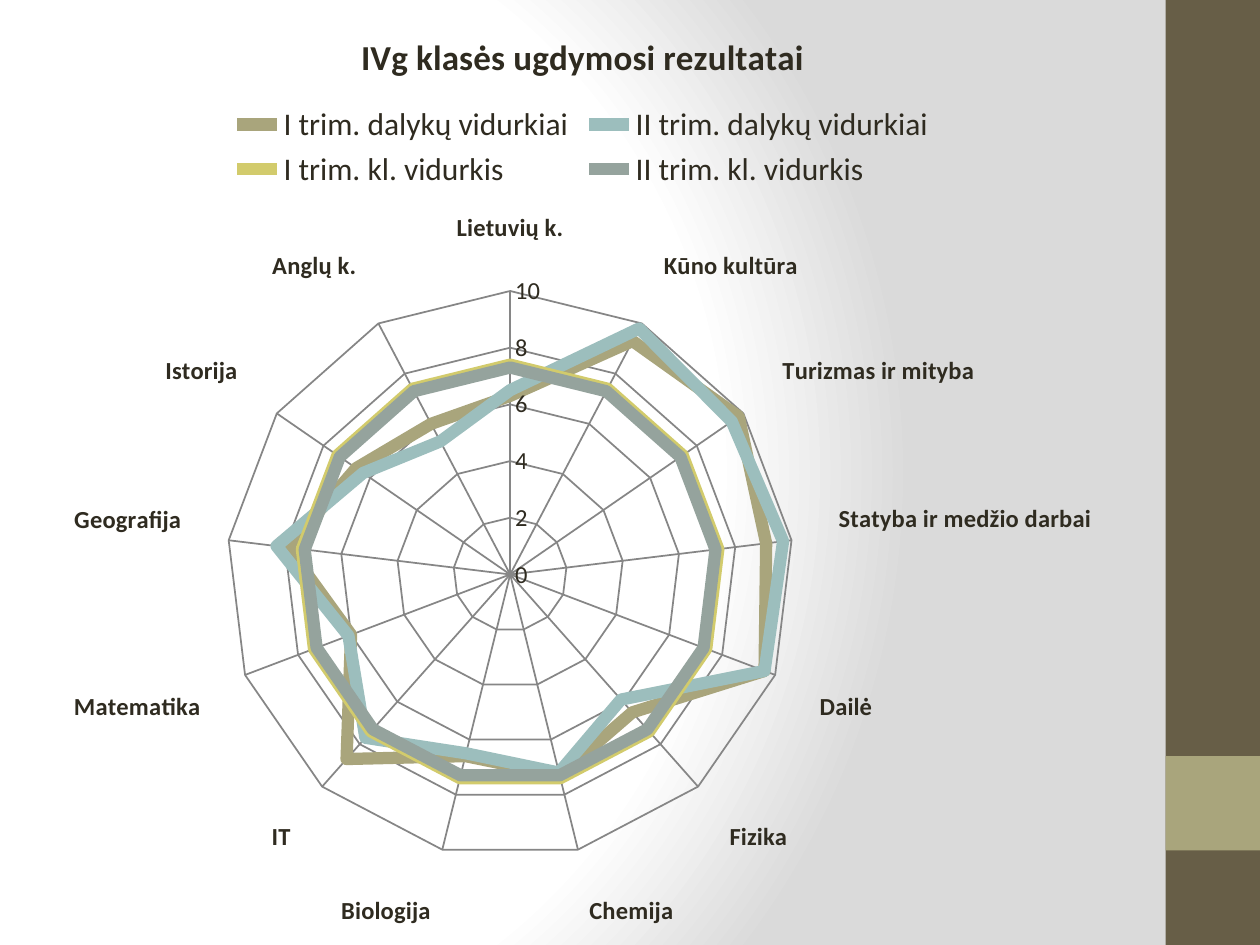
from pptx import Presentation
from pptx.chart.data import CategoryChartData
from pptx.dml.color import RGBColor
from pptx.enum.chart import XL_CHART_TYPE as ChartType
from pptx.enum.chart import XL_LEGEND_POSITION as LegendPosition
from pptx.enum.chart import XL_TICK_MARK as TickMark
from pptx.enum.shapes import MSO_SHAPE as Shape
from pptx.oxml import parse_xml
from pptx.oxml.ns import nsdecls
from pptx.util import Pt

COLORS = {
    "text": "2F2B20",
    "grid": "868686",
    "white": "FFFFFF",
    "shade": "DADADA",
    "band": "675E47",
    "accent": "A9A57C",
    "first": "A9A57C",
    "second": "9CBEBD",
    "first_mean": "D2CB6C",
    "second_mean": "95A39D",
}
WIDTH, HEIGHT, BAND = 720, 540, 54

FIRST = {
    "Lietuvių k.": (6.3, 6.5),
    "Anglų k.": (6, 5.3),
    "Istorija": (6.6, 6.3),
    "Geografija": (7.9, 8.3),
    "Matematika": (6, 6.1),
    "IT": (8.7, 7.7),
    "Biologija": (6.6, 6.5),
    "Chemija": (7.3, 7.2),
    "Fizika": (6.5, 5.9),
    "Dailė": (9.6, 9.6),
    "Statyba ir medžio darbai": (9.1, 9.7),
    "Turizmas ir mityba": (9.8, 9.5),
    "Kūno kultūra": (9.3, 9.8),
}
SUBJECTS = list(FIRST)
FIRST_MARKS, SECOND_MARKS = zip(*FIRST.values())
SERIES = [
    ("I trim. dalykų vidurkiai", FIRST_MARKS, "first"),
    ("II trim. dalykų vidurkiai", SECOND_MARKS, "second"),
    ("I trim. kl. vidurkis", [7.4] * len(SUBJECTS), "first_mean"),
    ("II trim. kl. vidurkis", [7.3] * len(SUBJECTS), "second_mean"),
]


class SlideBuilder:
    font_name = "Calibri"

    def __init__(self, slide):
        self.slide = slide

    def color(self, name):
        return RGBColor.from_string(COLORS[name])

    def style_font(self, font, size, bold=False):
        font.name = self.font_name
        font.size = Pt(size)
        font.bold = bold
        font.color.rgb = self.color("text")

    def style_line(self, line, name, width):
        line.color.rgb = self.color(name)
        line.width = Pt(width)

    def background(self, stops):
        fill = self.slide.background.fill
        fill.gradient()
        gradient = self.slide.background._cSld.bg.bgPr.find(
            "{http://schemas.openxmlformats.org/drawingml/2006/main}gradFill")
        stop_xml = "".join(
            f'<a:gs pos="{position * 1000}"><a:srgbClr val="{COLORS[name]}"/></a:gs>'
            for position, name in stops)
        gradient.getparent().replace(gradient, parse_xml(
            f'<a:gradFill {nsdecls("a")} rotWithShape="1"><a:gsLst>{stop_xml}</a:gsLst>'
            '<a:path path="circle"><a:fillToRect l="20000" t="50000" r="100000" b="50000"/>'
            '</a:path></a:gradFill>'))

    def block(self, left, top, width, height, name):
        box = self.slide.shapes.add_shape(
            Shape.RECTANGLE, Pt(left), Pt(top), Pt(width), Pt(height))
        box.shadow.inherit = False
        box.fill.solid()
        box.fill.fore_color.rgb = self.color(name)
        box.line.fill.background()

    def radar(self, left, top, width, height, title, subjects, series):
        data = CategoryChartData()
        data.categories = subjects
        for name, values, _ in series:
            data.add_series(name, values)
        chart = self.slide.shapes.add_chart(
            ChartType.RADAR, Pt(left), Pt(top), Pt(width), Pt(height), data).chart
        self.style_font(chart.font, 14)

        chart.has_title = True
        chart.chart_title.include_in_layout = False
        para = chart.chart_title.text_frame.paragraphs[0]
        para.text = title
        self.style_font(para.runs[0].font, 20, True)

        chart.has_legend = True
        chart.legend.position = LegendPosition.TOP
        chart.legend.include_in_layout = False
        self.style_font(chart.legend.font, 18)

        plot = chart.plots[0]
        plot.vary_by_categories = False
        for item, (_, _, color_name) in zip(plot.series, series):
            item.smooth = False
            self.style_line(item.format.line, color_name, 7)

        self.style_axes(chart.category_axis, chart.value_axis)

    def style_axes(self, subject_axis, mark_axis):
        for axis in (subject_axis, mark_axis):
            axis.major_tick_mark = TickMark.NONE
            axis.minor_tick_mark = TickMark.NONE
            axis.has_major_gridlines = True
            self.style_line(axis.major_gridlines.format.line, "grid", 1)
        subject_axis.reverse_order = True
        subject_axis.format.line.fill.background()
        self.style_font(subject_axis.tick_labels.font, 14, True)
        mark_axis.minimum_scale = 0
        mark_axis.maximum_scale = 10
        mark_axis.major_unit = 2
        mark_axis.tick_labels.number_format = "#,##0"
        mark_axis.tick_labels.number_format_is_linked = False
        self.style_line(mark_axis.format.line, "grid", 1)
        self.style_font(mark_axis.tick_labels.font, 14)


def main():
    deck = Presentation()
    deck.slide_width, deck.slide_height = Pt(WIDTH), Pt(HEIGHT)
    page = SlideBuilder(deck.slides.add_slide(deck.slide_layouts[6]))
    page.background([(0, "white"), (75, "white"), (100, "shade")])
    page.block(WIDTH - BAND, 0, BAND, HEIGHT, "band")
    page.block(WIDTH - BAND, HEIGHT - 2 * BAND, BAND, BAND, "accent")
    page.radar(0, 0, WIDTH - BAND, HEIGHT,
               "IVg klasės ugdymosi rezultatai", SUBJECTS, SERIES)
    deck.save("out.pptx")


if __name__ == "__main__":
    main()
